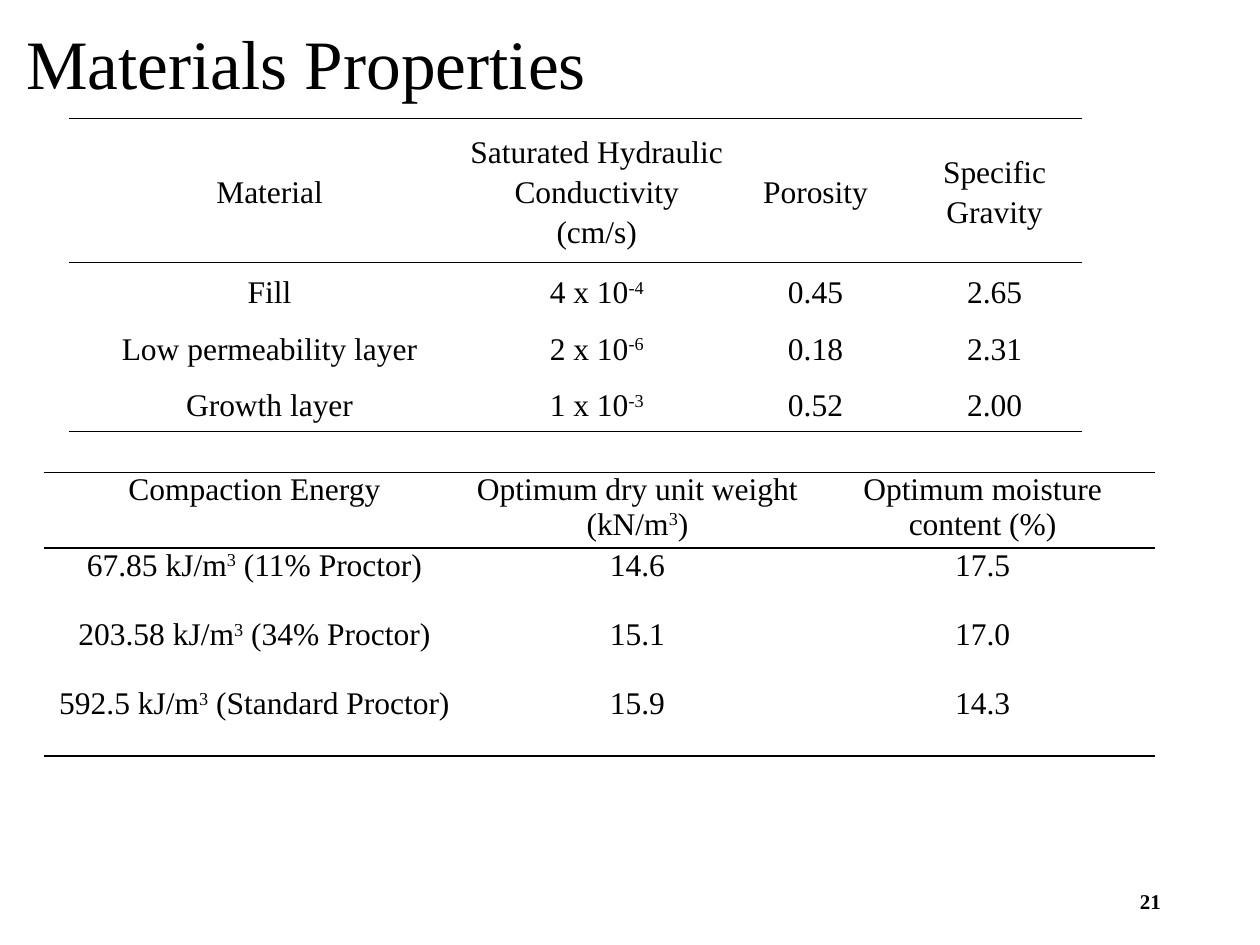
"""Build the materials properties slide with its two ruled tables."""
import pptx
import pptx.dml.color
import pptx.enum.text
import pptx.oxml
import pptx.oxml.ns
import pptx.util

Cm = pptx.util.Cm
Pt = pptx.util.Pt
ALIGN = pptx.enum.text.PP_ALIGN
ANCHOR = pptx.enum.text.MSO_ANCHOR
FONT = "Times New Roman"
INK = "000000"

TITLE = "Materials Properties"
PAGE_NUMBER = "21"
TABLES = [
    {
        "rows": [
            ("Compaction Energy", "Optimum dry unit weight (kN/m^3^)", "Optimum moisture content (%)"),
            ("67.85 kJ/m^3^ (11% Proctor)", "14.6", "17.5"),
            ("203.58 kJ/m^3^ (34% Proctor)", "15.1", "17.0"),
            ("592.5 kJ/m^3^ (Standard Proctor)", "15.9", "14.3"),
        ],
        "origin": (0.89, 9.52),
        "widths": (8.48, 6.96, 6.96),
        "heights": (1.45, 1.4, 1.4, 1.4),
        "insets": [(0.18, 0)] * 3,
        "anchor": ANCHOR.TOP,
        "spacing": 1.0,
    },
    {
        "rows": [
            ("Material", "Saturated Hydraulic Conductivity\v(cm/s)", "Porosity", "Specific Gravity"),
            ("Fill", "4 x 10^-4", "0.45", "2.65"),
            ("Low permeability layer", "2 x 10^-6", "0.18", "2.31"),
            ("Growth layer", "1 x 10^-3", "0.52", "2.00"),
        ],
        "origin": (1.4, 2.39),
        "widths": (8.07, 5.12, 3.7, 3.52),
        "heights": (2.9, 1.0, 1.0, 1.0),
        "insets": [(0.25, 0.13)] + [(0, 0)] * 3,
        "anchor": ANCHOR.MIDDLE,
        "spacing": 1.15,
    },
]


def color(hex_value):
    return pptx.dml.color.RGBColor.from_string(hex_value)


def style_runs(paragraph, size, bold=False):
    for run in paragraph.runs:
        run.font.name = FONT
        run.font.size = Pt(size)
        run.font.bold = bold
        run.font.color.rgb = color(INK)


def set_margins(target, horizontal, vertical):
    target.margin_left = target.margin_right = Cm(horizontal)
    target.margin_top = target.margin_bottom = Cm(vertical)


def write_markup(paragraph, markup):
    """Write text in which every second piece between carets is superscript."""
    base, *others = markup.split("^")
    paragraph.text = base
    for index, piece in enumerate(others):
        run = paragraph.add_run()
        run.text = piece
        if index % 2 == 0:
            run._r.get_or_add_rPr().set("baseline", "30000")


def set_borders(cell, ruled_edges):
    """Rule the named edges of a cell and clear the others."""
    cell.fill.background()
    properties = cell._tc.get_or_add_tcPr()
    namespace = pptx.oxml.ns.nsdecls("a")
    for index, edge in enumerate("LRTB"):
        paint = f'<a:solidFill><a:srgbClr val="{INK}"/></a:solidFill>' if edge in ruled_edges else "<a:noFill/>"
        border = f'<a:ln{edge} {namespace} w="{Pt(1)}">{paint}</a:ln{edge}>'
        properties.insert(index, pptx.oxml.parse_xml(border))


def add_ruled_table(slide, data):
    """Add a table ruled above, below its header and at its foot."""
    rows, widths, heights = data["rows"], data["widths"], data["heights"]
    left, top = data["origin"]
    table = slide.shapes.add_table(
        len(rows), len(widths), Cm(left), Cm(top), Cm(sum(widths)), Cm(sum(heights))
    ).table
    table.first_row = table.horz_banding = False
    for column, width in zip(table.columns, widths):
        column.width = Cm(width)
    for row_index, (row, height) in enumerate(zip(rows, heights)):
        table.rows[row_index].height = Cm(height)
        ruled_edges = ("T" if row_index < 2 else "") + ("B" if row_index in (0, len(rows) - 1) else "")
        for column_index, content in enumerate(row):
            cell = table.cell(row_index, column_index)
            set_margins(cell, *data["insets"][column_index])
            cell.vertical_anchor = data["anchor"]
            set_borders(cell, ruled_edges)
            paragraph = cell.text_frame.paragraphs[0]
            write_markup(paragraph, content)
            paragraph.alignment = ALIGN.CENTER
            paragraph.line_spacing = data["spacing"]
            style_runs(paragraph, 18)


def add_title(slide):
    title = slide.shapes.title
    title.left, title.top, title.width, title.height = Cm(0.28), Cm(0), Cm(12.01), Cm(4.09)
    frame = title.text_frame
    frame.text = TITLE
    frame.word_wrap = True
    frame.auto_size = pptx.enum.text.MSO_AUTO_SIZE.NONE
    frame.vertical_anchor = ANCHOR.TOP
    set_margins(frame, 0.25, 0.6)
    heading = frame.paragraphs[0]
    heading.alignment = ALIGN.LEFT
    heading.line_spacing = 0.9
    style_runs(heading, 39.6)


def add_page_number(slide):
    frame = slide.shapes.add_textbox(Cm(17.93), Cm(17.65), Cm(5.72), Cm(1.02)).text_frame
    frame.text = PAGE_NUMBER
    frame.word_wrap = True
    frame.vertical_anchor = ANCHOR.MIDDLE
    number = frame.paragraphs[0]
    number.alignment = ALIGN.RIGHT
    style_runs(number, 12, bold=True)


def main():
    presentation = pptx.Presentation()
    presentation.slide_width, presentation.slide_height = Cm(25.4), Cm(19.05)
    slide = presentation.slides.add_slide(presentation.slide_layouts[5])
    add_title(slide)
    add_page_number(slide)
    for data in TABLES:
        add_ruled_table(slide, data)
    presentation.save("out.pptx")


if __name__ == "__main__":
    main()
